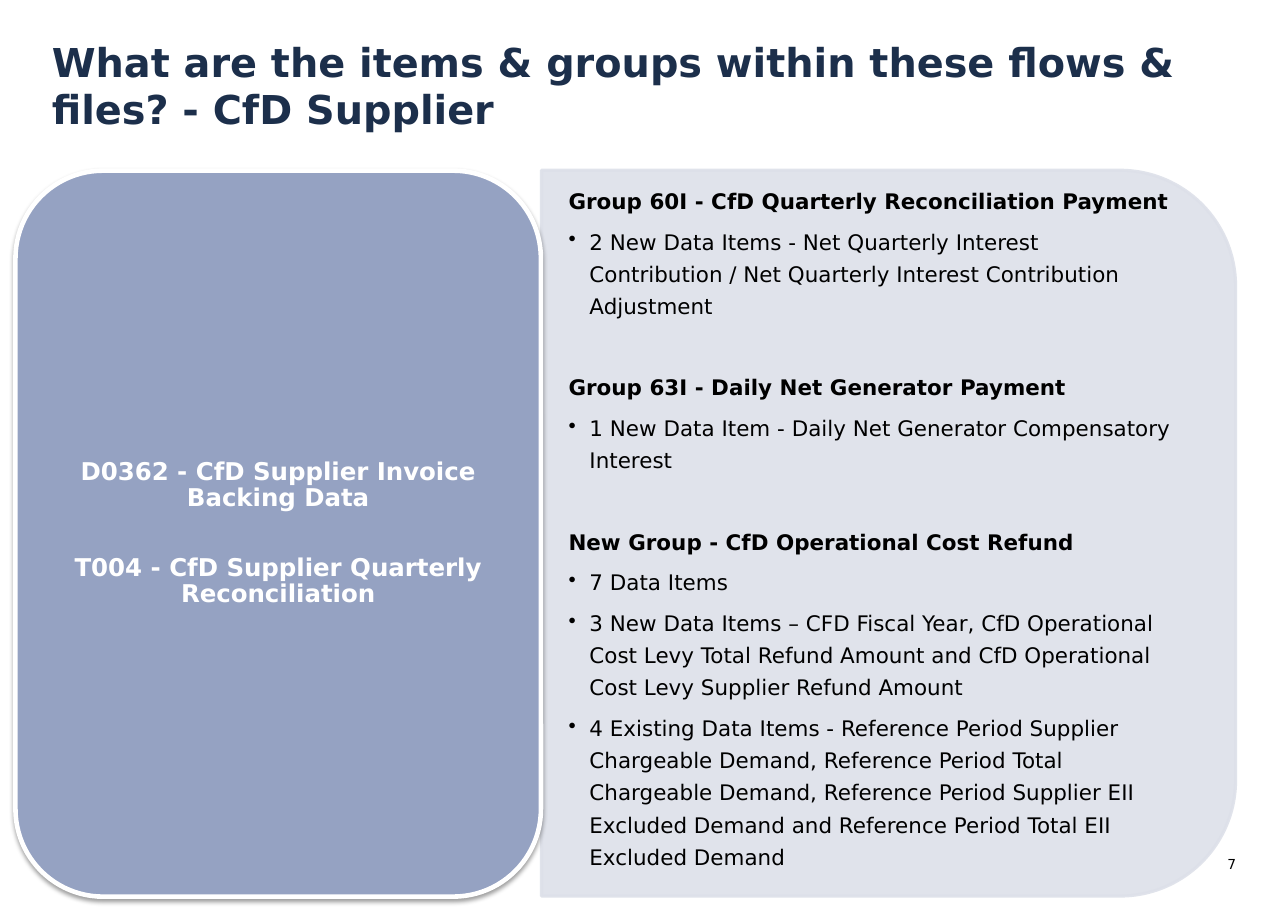
"""Build the slide on items and groups within the CfD Supplier flows and files."""
from lxml.etree import SubElement
from pptx import Presentation
from pptx.dml.color import RGBColor
from pptx.enum.shapes import MSO_SHAPE
from pptx.enum.text import MSO_ANCHOR, PP_ALIGN
from pptx.oxml import parse_xml
from pptx.oxml.ns import nsdecls, qn
from pptx.util import Inches, Pt

COLORS = {"navy": "1C2F4B", "black": "000000", "white": "FFFFFF",
          "card": "95A2C2", "panel": "DDE0E9"}
FONT = "DejaVu Sans"

deck = Presentation()
deck.slide_width, deck.slide_height = Inches(11.69), Inches(8.27)
slide = deck.slides.add_slide(deck.slide_layouts[6])


def area(left, top, width, height):
    across, down = deck.slide_width / 100, deck.slide_height / 100
    return [round(n) for n in (left * across, top * down, width * across, height * down)]


def write(frame, text, size, color="black", bold=False, align=PP_ALIGN.LEFT,
          line=1.0, before=0, after=0, bullet=False):
    frame.word_wrap = True
    first = not frame.text
    paragraph = frame.paragraphs[0] if first else frame.add_paragraph()
    if bullet:
        properties = paragraph._p.get_or_add_pPr()
        properties.set("marL", str(Inches(0.19)))
        properties.set("indent", str(-Inches(0.19)))
        SubElement(properties, qn("a:buChar"), char="•")
    paragraph.alignment = align
    paragraph.line_spacing = line
    paragraph.space_before = Pt(0 if first else before)
    paragraph.space_after = Pt(after)
    run = paragraph.add_run()
    run.text = text
    run.font.name, run.font.size, run.font.bold = FONT, Pt(size), bold
    run.font.color.rgb = RGBColor.from_string(COLORS[color])


title = slide.shapes.add_textbox(*area(4.02, 4.11, 91.96, 11.4)).text_frame
page_number = slide.shapes.add_textbox(*area(92.64, 93.95, 3.34, 2.42)).text_frame

panel = slide.shapes.add_shape(MSO_SHAPE.ROUND_2_SAME_RECTANGLE,
                               *area(40.8, 20.44, 56.37, 76.18))
panel.rotation = 90
card = slide.shapes.add_shape(MSO_SHAPE.ROUNDED_RECTANGLE, *area(1.2, 18.74, 40.8, 79.69))
for shape, fill, outline, weight in ((panel, "panel", "panel", 2), (card, "card", "white", 3)):
    shape.shadow.inherit = False
    shape.fill.solid()
    shape.fill.fore_color.rgb = RGBColor.from_string(COLORS[fill])
    shape.line.color.rgb = RGBColor.from_string(COLORS[outline])
    shape.line.width = Pt(weight)

for tint in panel._element.spPr.iter(qn("a:srgbClr")):
    SubElement(tint, qn("a:alpha"), val="90000")
card._element.spPr.find(qn("a:effectLst")).append(parse_xml(
    f'<a:outerShdw {nsdecls("a")} blurRad="{Pt(3.1)}" dist="{Pt(1.6)}" dir="5400000" '
    f'rotWithShape="0"><a:srgbClr val="{COLORS["black"]}"><a:alpha val="38000"/>'
    '</a:srgbClr></a:outerShdw>'))

details = slide.shapes.add_textbox(*area(44.14, 19.95, 47.39, 79)).text_frame
for frame in (title, page_number, details):
    frame.margin_left = frame.margin_right = frame.margin_top = frame.margin_bottom = 0

write(title, "What are the items & groups within these flows & files? - CfD Supplier",
      size=26, color="navy", bold=True)
write(page_number, "7", size=9, align=PP_ALIGN.RIGHT)

flows = card.text_frame
flows.vertical_anchor = MSO_ANCHOR.MIDDLE
flows.margin_left = flows.margin_right = Inches(0.07)
flows.margin_top = flows.margin_bottom = Inches(0.03)
for flow in ("D0362 - CfD Supplier Invoice Backing Data",
             "T004 - CfD Supplier Quarterly Reconciliation"):
    write(flows, flow, size=16, color="white", bold=True, align=PP_ALIGN.CENTER,
          line=0.9, before=22.9, after=5.6)

groups = {
    "Group 60I - CfD Quarterly Reconciliation Payment": [
        "2 New Data Items - Net Quarterly Interest Contribution / "
        "Net Quarterly Interest Contribution Adjustment"],
    "Group 63I - Daily Net Generator Payment": [
        "1 New Data Item - Daily Net Generator Compensatory Interest"],
    "New Group - CfD Operational Cost Refund": [
        "7 Data Items",
        "3 New Data Items – CFD Fiscal Year, CfD Operational Cost Levy Total Refund "
        "Amount and CfD Operational Cost Levy Supplier Refund Amount",
        "4 Existing Data Items - Reference Period Supplier Chargeable Demand, "
        "Reference Period Total Chargeable Demand, Reference Period Supplier EII "
        "Excluded Demand and Reference Period Total EII Excluded Demand"],
}
for group, items in groups.items():
    write(details, group, size=14, bold=True, line=Pt(21), before=26.6, after=5.6)
    for item in items:
        write(details, item, size=14, line=Pt(21), after=5.6, bullet=True)

deck.save("out.pptx")
